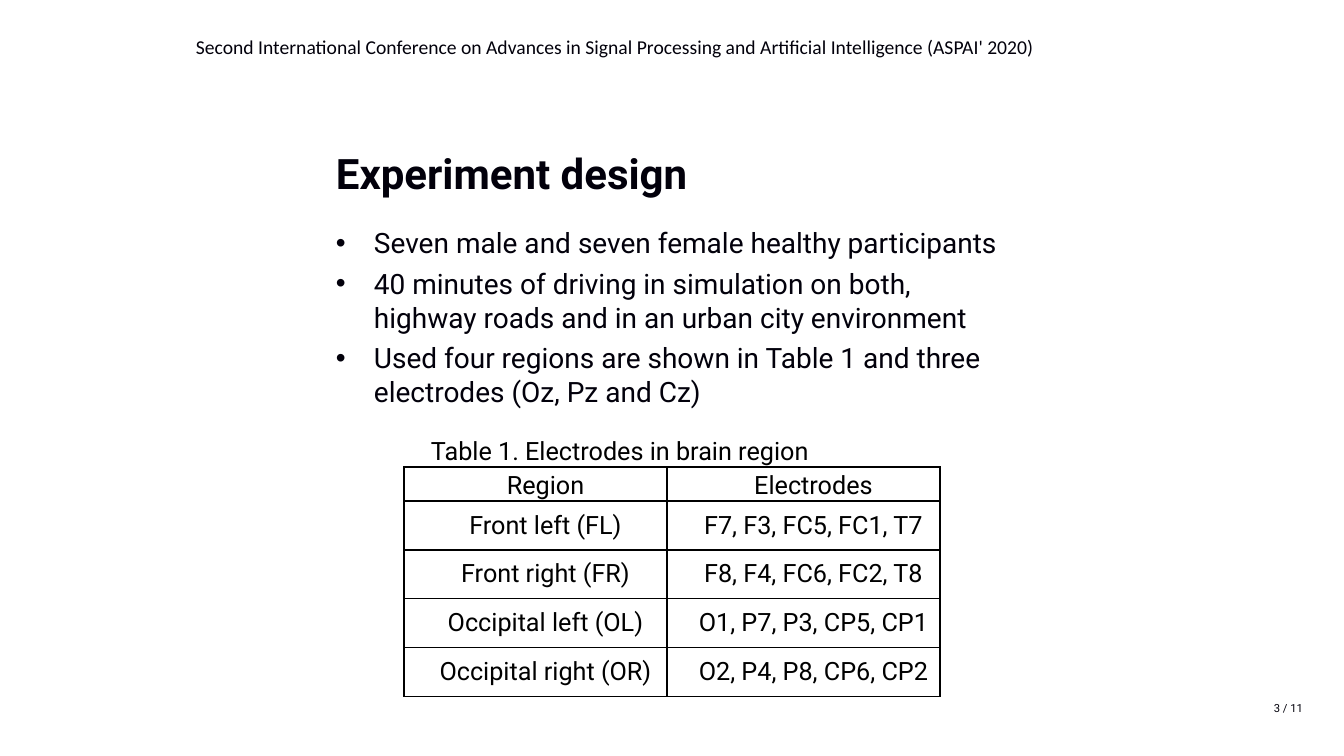
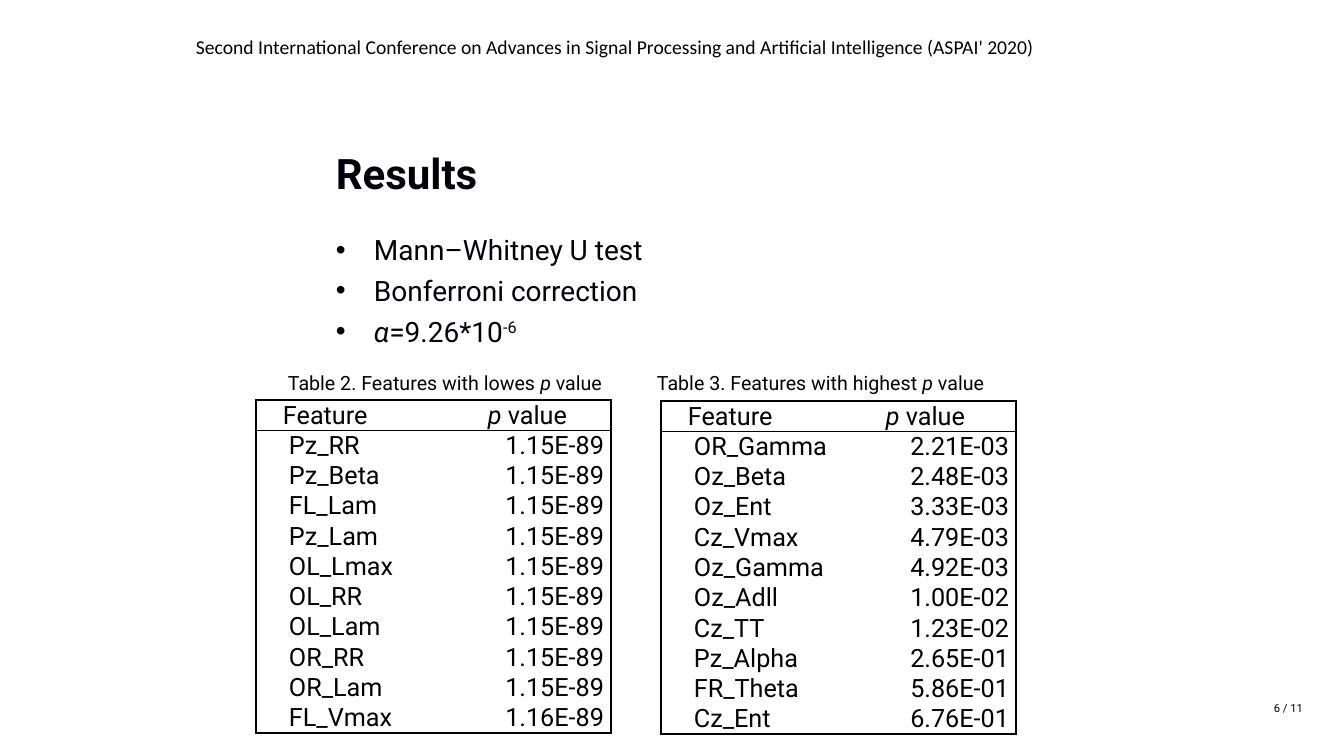
from lxml import etree
from pptx import Presentation
from pptx import util as u
from pptx.dml.color import RGBColor
from pptx.enum import text
from pptx.oxml.ns import qn

INK = RGBColor(0x02, 0x00, 0x0B)
BLACK = RGBColor(0, 0, 0)
FONT = "Roboto"
HEADER_FONT = "Calibri"
HEADER = ("Second International Conference on Advances in Signal Processing "
          "and Artificial Intelligence (ASPAI' 2020)")
PAGE_COUNT = 11
CELL_INDENT = 20
FEATURE_INDENT = 26
P_VALUE = [("p ", "italic"), ("value", None)]
LEFT, CENTER, RIGHT = text.PP_ALIGN.LEFT, text.PP_ALIGN.CENTER, text.PP_ALIGN.RIGHT
TOP, MIDDLE, BOTTOM = text.MSO_ANCHOR.TOP, text.MSO_ANCHOR.MIDDLE, text.MSO_ANCHOR.BOTTOM

REGIONS = [
    ("Front left (FL)", "F7, F3, FC5, FC1, T7"),
    ("Front right (FR)", "F8, F4, FC6, FC2, T8"),
    ("Occipital left (OL)", "O1, P7, P3, CP5, CP1"),
    ("Occipital right (OR)", "O2, P4, P8, CP6, CP2"),
]
LOWEST = [
    ("Pz_RR", "1.15E-89"), ("Pz_Beta", "1.15E-89"), ("FL_Lam", "1.15E-89"),
    ("Pz_Lam", "1.15E-89"), ("OL_Lmax", "1.15E-89"), ("OL_RR", "1.15E-89"),
    ("OL_Lam", "1.15E-89"), ("OR_RR", "1.15E-89"), ("OR_Lam", "1.15E-89"),
    ("FL_Vmax", "1.16E-89"),
]
HIGHEST = [
    ("OR_Gamma", "2.21E-03"), ("Oz_Beta", "2.48E-03"), ("Oz_Ent", "3.33E-03"),
    ("Cz_Vmax", "4.79E-03"), ("Oz_Gamma", "4.92E-03"), ("Oz_Adll", "1.00E-02"),
    ("Cz_TT", "1.23E-02"), ("Pz_Alpha", "2.65E-01"), ("FR_Theta", "5.86E-01"),
    ("Cz_Ent", "6.76E-01"),
]


def px(n):
    return round(n * 914400 / 100.8)


def write(p, content, size, color=INK, font=FONT, bold=False, align=LEFT):
    p.alignment = align
    parts = [(content, None)] if isinstance(content, str) else content
    for words, style in parts:
        r = p.add_run()
        r.text = words
        r.font.size = u.Pt(size)
        r.font.name = font
        r.font.bold = bold
        r.font.italic = style == "italic"
        r.font.color.rgb = color
        if style == "super":
            r.font._element.set("baseline", "30000")


def indent(p, margin, first):
    pPr = p._p.get_or_add_pPr()
    pPr.set("marL", str(px(margin)))
    pPr.set("indent", str(px(first)))
    return pPr


def add_box(slide, x, y, w, h, anchor=TOP, wrap=True):
    tf = slide.shapes.add_textbox(px(x), px(y), px(w), px(h)).text_frame
    tf.word_wrap = wrap
    tf.vertical_anchor = anchor
    return tf


def add_bullets(slide, y, h, items):
    tf = add_box(slide, 326, y, 692, h)
    for i, item in enumerate(items):
        p = tf.add_paragraph() if i else tf.paragraphs[0]
        pPr = indent(p, 38, -38)
        etree.SubElement(pPr, qn("a:buFont"), typeface="Arial")
        etree.SubElement(pPr, qn("a:buChar"), char="•")
        if i:
            p.space_before = u.Pt(5)
        write(p, item, 20)


def add_caption(slide, x, w, kind):
    tf = add_box(slide, x, 366, w, 34, wrap=False)
    write(tf.paragraphs[0], [(kind + " ", None)] + P_VALUE, 14)


def set_borders(cell, sides):
    tcPr = cell._tc.get_or_add_tcPr()
    for side in "LRTB":
        ln = etree.SubElement(tcPr, qn("a:ln" + side), w=str(u.Pt(1)))
        if side in sides:
            fill = etree.SubElement(ln, qn("a:solidFill"))
            etree.SubElement(fill, qn("a:srgbClr"), val=str(BLACK))
        else:
            etree.SubElement(ln, qn("a:noFill"))
    cell.fill.background()


def fill_cell(cell, content, sides, align=LEFT, anchor=BOTTOM, first=CELL_INDENT):
    cell.margin_left = cell.margin_right = px(7)
    cell.margin_top = cell.margin_bottom = 0
    cell.vertical_anchor = anchor
    set_borders(cell, sides)
    p = cell.text_frame.paragraphs[0]
    indent(p, 0, first)
    if content:
        write(p, content, 18, BLACK, align=align)


def add_grid(slide, x, y, widths, heights):
    frame = slide.shapes.add_table(len(heights), len(widths), px(x), px(y),
                                   px(sum(widths)), px(sum(heights)))
    table = frame.table
    table.first_row = table.horz_banding = False
    for col, w in zip(table.columns, widths):
        col.width = px(w)
    for row, h in zip(table.rows, heights):
        row.height = px(h)
    return table


def add_region_table(slide):
    table = add_grid(slide, 404, 433, [263, 273], [34, 34] + [49] * len(REGIONS))
    fill_cell(table.cell(0, 0), "Table 1. Electrodes in brain region", "B")
    fill_cell(table.cell(0, 1), "", "B")
    table.cell(0, 0).merge(table.cell(0, 1))
    for i, row in enumerate([("Region", "Electrodes")] + REGIONS):
        for j, content in enumerate(row):
            fill_cell(table.cell(i + 1, j), content, "LRTB", CENTER,
                      MIDDLE if i else BOTTOM)


def add_feature_table(slide, x, y, widths, features):
    table = add_grid(slide, x, y, widths, [30] * (len(features) + 1))
    fill_cell(table.cell(0, 0), "Feature", "LTB")
    fill_cell(table.cell(0, 1), P_VALUE, "RTB")
    for i, (feature, value) in enumerate(features, 1):
        edge = ("T" if i == 1 else "") + ("B" if i == len(features) else "")
        fill_cell(table.cell(i, 0), feature, "L" + edge, first=FEATURE_INDENT)
        fill_cell(table.cell(i, 1), value, "R" + edge, RIGHT)


def add_slide(prs, title, number):
    slide = prs.slides.add_slide(prs.slide_layouts[6])
    header = add_box(slide, 186, 30, 873, 34)
    write(header.paragraphs[0], HEADER, 14, font=HEADER_FONT)
    page = add_box(slide, 1224, 697, 89, 23, BOTTOM).paragraphs[0]
    page.line_spacing = 0.9
    write(page, f"{number} / {PAGE_COUNT}", 8, align=RIGHT)
    heading = add_box(slide, 326, 104, 692, 99, BOTTOM)
    write(heading.paragraphs[0], title, 30, bold=True)
    return slide


def add_design_slide(prs):
    slide = add_slide(prs, "Experiment design", 3)
    add_bullets(slide, 221, 202, [
        "Seven male and seven female healthy participants",
        "40 minutes of driving in simulation on both, highway roads "
        "and in an urban city environment",
        "Used four regions are shown in Table 1 and three electrodes "
        "(Oz, Pz and Cz)",
    ])
    add_region_table(slide)


def add_results_slide(prs):
    slide = add_slide(prs, "Results", 6)
    add_bullets(slide, 228, 127, [
        "Mann–Whitney U test",
        "Bonferroni correction",
        [("α", "italic"), ("=9.26*10", None), ("-6", "super")],
    ])
    add_feature_table(slide, 256, 400, [205, 150], LOWEST)
    add_feature_table(slide, 661, 401, [198, 157], HIGHEST)
    add_caption(slide, 278, 339, "Table 2. Features with lowes")
    add_caption(slide, 647, 355, "Table 3. Features with highest")


def main():
    prs = Presentation()
    prs.slide_width, prs.slide_height = px(1344), px(756)
    add_design_slide(prs)
    add_results_slide(prs)
    prs.save("out.pptx")


if __name__ == "__main__":
    main()
